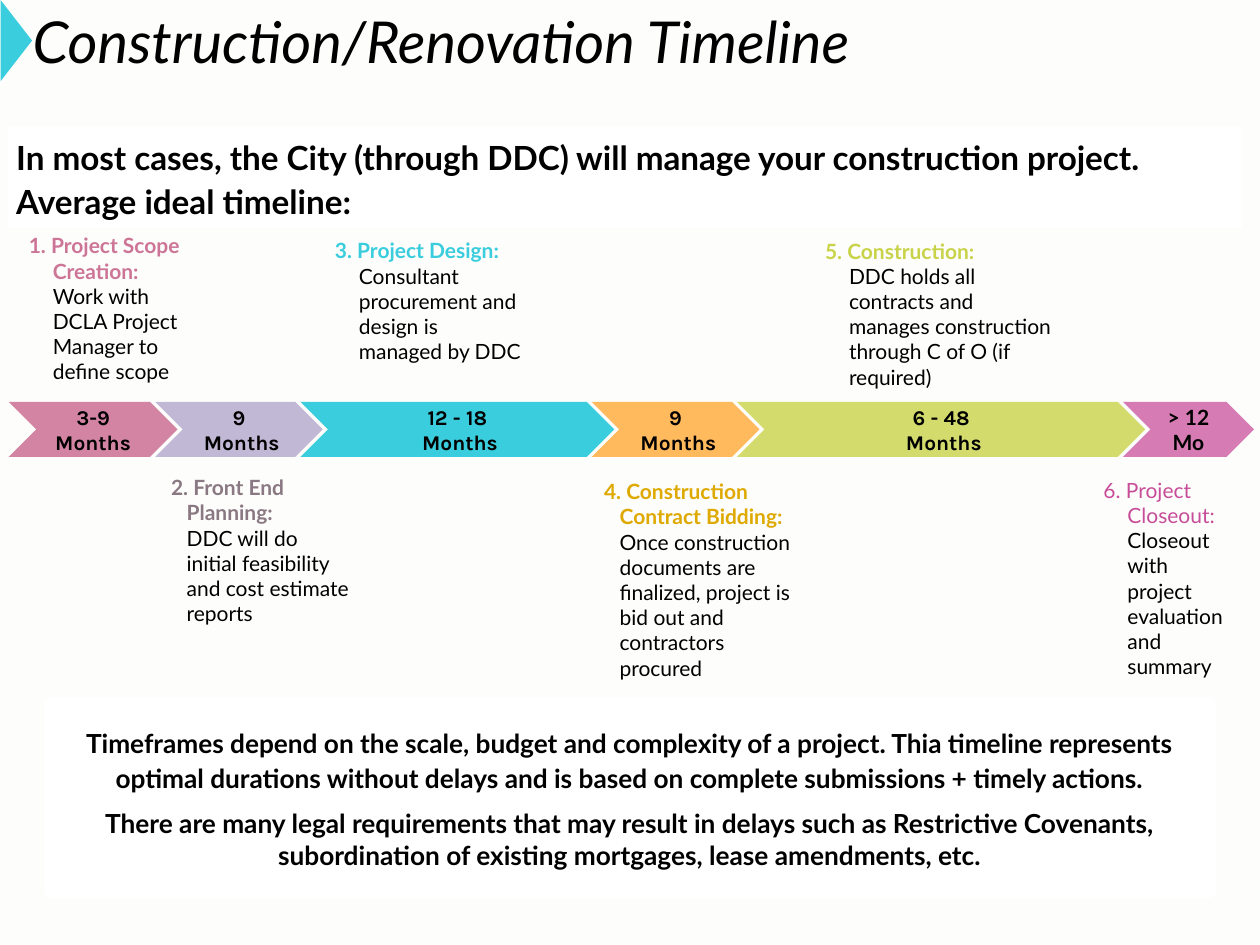
"""Build the construction and renovation timeline slide."""
from dataclasses import dataclass

from pptx import Presentation
from pptx.dml.color import RGBColor
from pptx.enum.shapes import MSO_SHAPE as Preset
from pptx.enum.text import MSO_ANCHOR as Anchor, PP_ALIGN as Align
from pptx.util import Pt


@dataclass(frozen=True)
class Theme:
    paper: str = "FDFDFB"
    panel: str = "FFFFFF"
    ink: str = "000000"
    accent: str = "39CDDD"
    scope: str = "D284A2"
    planning: str = "C1B8D5"
    bidding: str = "FFBA5D"
    building: str = "D2DB6B"
    closeout: str = "D67BB3"
    scope_head: str = "CD7597"
    planning_head: str = "8A7883"
    bidding_head: str = "DEA900"
    building_head: str = "C9D349"
    closeout_head: str = "C74D99"
    body_font: str = "Lato"
    step_font: str = "Karla"
    title_size: float = 33
    lead_size: float = 19
    note_size: float = 15
    step_size: float = 12


theme = Theme()


def write(shape, *texts, size=theme.step_size, font=theme.body_font, colors=(theme.ink,),
          bolds=(True,), italic=False, align=Align.LEFT, anchor=Anchor.TOP, margins=(7.2, 3.6),
          indents=((0, 0),), spacings=(None,), after=0):
    frame = shape.text_frame
    frame.word_wrap = True
    frame.vertical_anchor = anchor
    frame.margin_left = frame.margin_right = Pt(margins[0])
    frame.margin_top = frame.margin_bottom = Pt(margins[1])
    for i, text in enumerate(texts):
        paragraph = frame.paragraphs[0] if i == 0 else frame.add_paragraph()
        paragraph.alignment = align
        paragraph.line_spacing = spacings[i % len(spacings)]
        paragraph.space_after = Pt(after if i < len(texts) - 1 else 0)
        left, first = indents[i % len(indents)]
        properties = paragraph._p.get_or_add_pPr()
        properties.set("marL", str(Pt(left)))
        properties.set("indent", str(Pt(first)))
        run = paragraph.add_run()
        run.text = text
        run.font.name = font
        run.font.size = Pt(size)
        run.font.bold = bolds[i % len(bolds)]
        run.font.italic = italic
        run.font.color.rgb = RGBColor.from_string(colors[i % len(colors)])


def add_filled(preset, left, top, width, height, color):
    shape = slide.shapes.add_shape(preset, Pt(left), Pt(top), Pt(width), Pt(height))
    shape.shadow.inherit = False
    shape.fill.solid()
    shape.fill.fore_color.rgb = RGBColor.from_string(color)
    shape.line.fill.background()
    return shape


deck = Presentation()
deck.slide_width, deck.slide_height = Pt(720), Pt(540)
slide = deck.slides.add_slide(deck.slide_layouts[6])
slide.background.fill.solid()
slide.background.fill.fore_color.rgb = RGBColor.from_string(theme.paper)

title = slide.shapes.add_textbox(Pt(0), Pt(0), Pt(720), Pt(46))
write(title, "Construction/Renovation Timeline", size=theme.title_size, bolds=(False,),
      italic=True, anchor=Anchor.MIDDLE, margins=(5, 3), indents=((13.7, 0),))

lead = add_filled(Preset.ROUNDED_RECTANGLE, 4.3, 72.7, 705.6, 57.6, theme.panel)
lead.adjustments[0] = 0
write(lead, "In most cases, the City (through DDC) will manage your construction project. "
      "Average ideal timeline:", size=theme.lead_size, anchor=Anchor.MIDDLE,
      margins=(5, 3), spacings=(1.1,))

durations = [
    (96.5, theme.scope, theme.step_font, 7.2, ["3-9 Months"]),
    (95.8, theme.planning, theme.step_font, 7.2, ["9", " Months"]),
    (179.3, theme.accent, theme.step_font, 5, ["12 - 18", " Months"]),
    (95.8, theme.bidding, theme.step_font, 7.2, ["9", " Months"]),
    (233.3, theme.building, theme.step_font, 5, ["6 - 48", " Months"]),
    (74.9, theme.closeout, theme.body_font, 5, ["> 12", "Mo"]),
]
step_left, overlap = 5, 12.8
for width, color, font, side, lines in durations:
    step = add_filled(Preset.CHEVRON, step_left, 229.7, width, 31.4, color)
    write(step, *lines, font=font, align=Align.CENTER, anchor=Anchor.MIDDLE, margins=(side, 3))
    step_left += width - overlap

note = add_filled(Preset.ROUNDED_RECTANGLE, 24.9, 398.2, 670, 115.2, theme.panel)
note.adjustments[0] = 0.035
write(note,
      "Timeframes depend on the scale, budget and complexity of a project. Thia timeline "
      "represents optimal durations without delays and is based on complete submissions "
      "+ timely actions.",
      "There are many legal requirements that may result in delays such as Restrictive "
      "Covenants, subordination of existing mortgages, lease amendments, etc.",
      size=theme.note_size, align=Align.CENTER, anchor=Anchor.MIDDLE, margins=(0, 3),
      spacings=(1.1, None), after=8)

title_marker = add_filled(Preset.FLOWCHART_EXTRACT, -13.9, 14.2, 46.4, 18, theme.accent)
title_marker.rotation = 90

phases = [
    (9.4, 129.6, 116, 85.7, theme.scope_head, True, 13.7, -13.7, "1. Project Scope Creation:",
     "Work with DCLA Project Manager to define scope"),
    (90.7, 267.8, 116, 125.3, theme.planning_head, True, 8.9, -8.9, "2. Front End Planning:",
     "DDC will do initial feasibility and cost estimate reports"),
    (184.3, 132.5, 123.8, 80, theme.accent, True, 13.7, None, "3. Project Design:",
     "Consultant procurement and design is managed by DDC"),
    (338.1, 270, 133.2, 123.8, theme.bidding_head, True, 8.9, -8.9,
     "4. Construction Contract Bidding:",
     "Once construction documents are finalized, project is bid out and contractors procured"),
    (464.4, 132.5, 146.9, 94.3, theme.building_head, True, 13.7, None, "5. Construction:",
     "DDC holds all contracts and manages construction through C of O (if required)"),
    (623.5, 269.3, 86.4, 124.6, theme.closeout_head, False, 13.7, -13.7, "6. Project Closeout:",
     "Closeout with project evaluation and summary"),
]
for left, top, width, height, color, bold, indent, hanging, heading, detail in phases:
    phase = slide.shapes.add_textbox(Pt(left), Pt(top), Pt(width), Pt(height))
    heading_indent = (0, 0) if hanging is None else (indent, hanging)
    write(phase, heading, detail, colors=(color, theme.ink), bolds=(bold, False),
          indents=(heading_indent, (indent, 0)))

deck.save("out.pptx")
